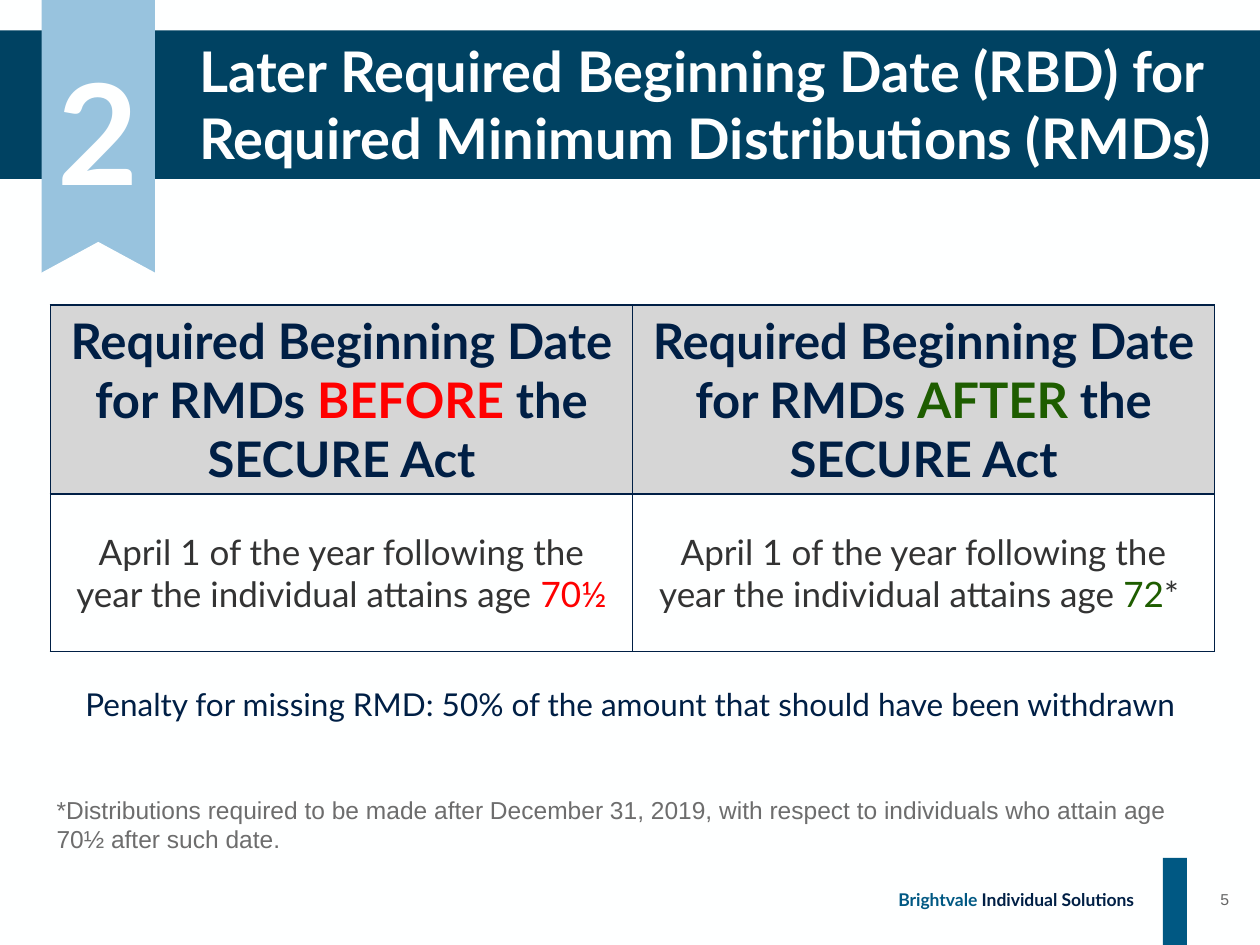
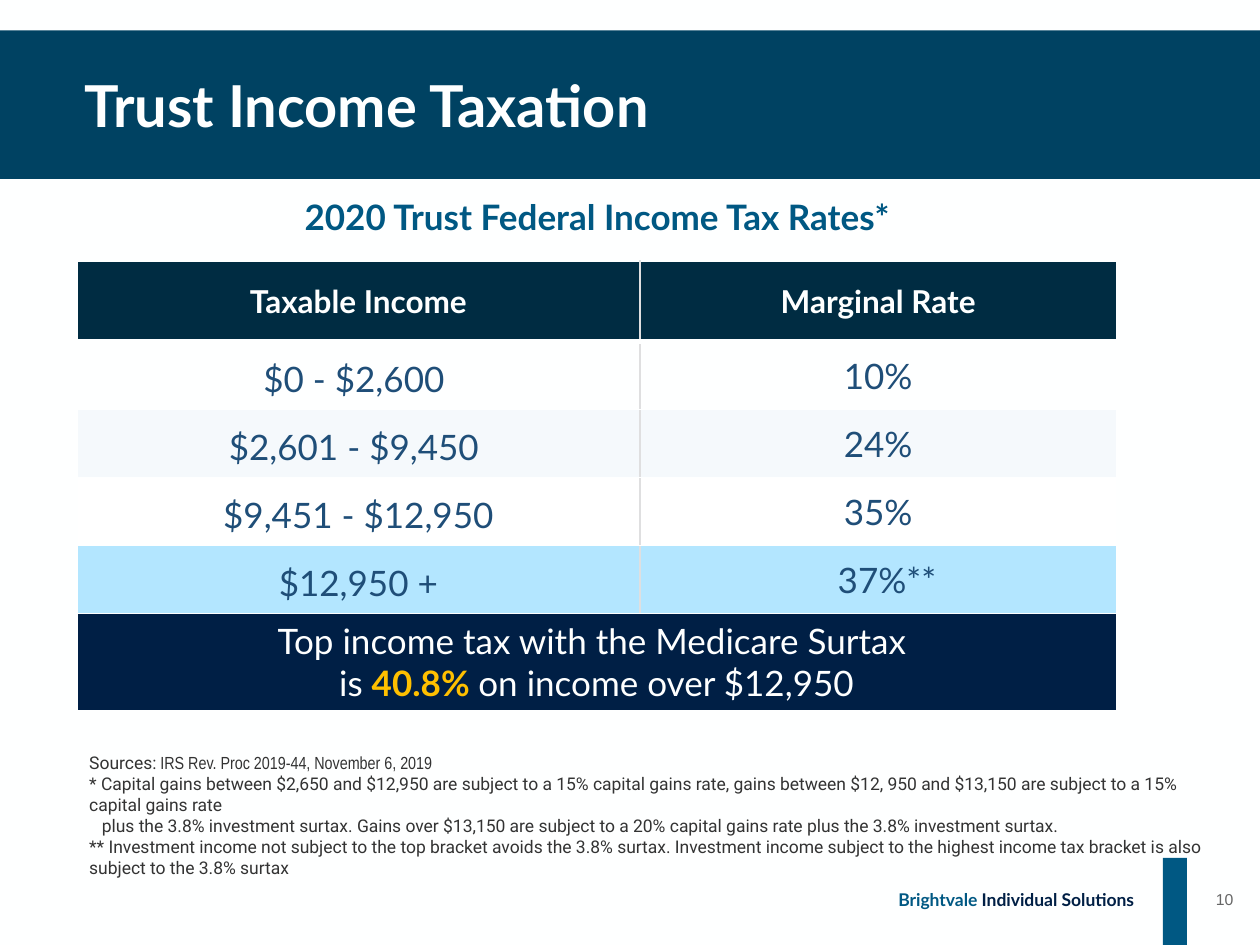
from lxml.etree import SubElement
from pptx import Presentation
from pptx.dml.color import RGBColor
from pptx.enum.shapes import MSO_SHAPE
from pptx.enum.text import MSO_ANCHOR, PP_ALIGN
from pptx.oxml.ns import qn
from pptx.util import Inches, Pt

PAPER, NAVY, BLUE, BAND = "FEFFFF", "001F45", "005883", "004262"
INK, RED, GREEN, GOLD = "333333", "FF0000", "1E5D00", "FFC000"
SKY, GRAY, STEEL, RULE = "98C3DE", "D6D6D6", "1F4E78", "DFDFE0"
LEFT, MID, RIGHT = PP_ALIGN.LEFT, PP_ALIGN.CENTER, PP_ALIGN.RIGHT
TOP, CENTER, BASE = MSO_ANCHOR.TOP, MSO_ANCHOR.MIDDLE, MSO_ANCHOR.BOTTOM


def rgb(code):
    return RGBColor.from_string(code)


class Deck:
    """Holds the shared style and the current slide."""

    def __init__(self):
        self.prs = Presentation()
        self.prs.slide_width, self.prs.slide_height = Inches(10), Inches(7.5)
        self.slide = None

    def page(self, title, num, box, size):
        self.slide = self.prs.slides.add_slide(self.prs.slide_layouts[6])
        fill = self.slide.background.fill
        fill.solid()
        fill.fore_color.rgb = rgb(PAPER)
        self.block((0, 0.24, 10, 1.18), BAND)
        self.block((9.23, 6.81, 0.19, 0.7), BLUE)
        brand = [("Brightvale", {"color": BLUE}), " Individual Solutions"]
        self.text((6.31, 6.76, 2.69, 0.75), [brand], 10, NAVY, bold=True,
                  align=RIGHT, anchor=CENTER, inset=False)
        self.text(box, [title], size, PAPER, bold=True, anchor=CENTER, inset=False)
        self.text((9.44, 6.76, 0.56, 0.75), [num], 9, "666666", face="Arial",
                  align=MID, anchor=CENTER, inset=False)

    def block(self, box, color, kind=MSO_SHAPE.RECTANGLE, turn=0):
        shape = self.slide.shapes.add_shape(kind, *map(Inches, box))
        shape.shadow.inherit = False
        shape.fill.solid()
        shape.fill.fore_color.rgb = rgb(color)
        shape.line.fill.background()
        shape.rotation = turn

    def style(self, font, face=None, size=None, color=None, bold=None):
        if face:
            font.name = face
        if size:
            font.size = Pt(size)
        if color:
            font.color.rgb = rgb(color)
        if bold is not None:
            font.bold = bold

    def put(self, frame, paras, size, color, bold=False, face="Lato",
            align=LEFT, space=None, indents=()):
        for i, parts in enumerate(paras):
            para = frame.paragraphs[0] if i == 0 else frame.add_paragraph()
            para.alignment = align
            if space:
                para.line_spacing = space
            if i < len(indents) and indents[i]:
                para._p.get_or_add_pPr().set("marL", str(Inches(indents[i])))
            self.style(para.font, face, size, color, bold)
            for part in [parts] if isinstance(parts, str) else parts:
                words, look = (part, {}) if isinstance(part, str) else part
                for j, line in enumerate(words.split("\n")):
                    if j:
                        para.add_line_break()
                    run = para.add_run()
                    run.text = line
                    self.style(run.font, **look)

    def text(self, box, paras, size, color, anchor=TOP, inset=True, **look):
        frame = self.slide.shapes.add_textbox(*map(Inches, box)).text_frame
        frame.word_wrap = True
        frame.vertical_anchor = anchor
        if not inset:
            frame.margin_left = frame.margin_right = 0
            frame.margin_top = frame.margin_bottom = 0
        self.put(frame, paras, size, color, **look)

    def table(self, spot, cols, rows):
        shape = self.slide.shapes.add_table(
            len(rows), len(cols), *map(Inches, (*spot, sum(cols), sum(rows))))
        table = shape.table
        table.first_row = table.horz_banding = False
        for col, wide in zip(table.columns, cols):
            col.width = Inches(wide)
        for row, high in zip(table.rows, rows):
            row.height = Inches(high)
        return table

    def cell(self, cell, parts, size, color, fill, edges, anchor=CENTER, **look):
        props = cell._tc.get_or_add_tcPr()
        for side, (tint, width) in zip("LRTB", edges):
            line = SubElement(props, qn(f"a:ln{side}"), w=str(Pt(width)))
            SubElement(SubElement(line, qn("a:solidFill")), qn("a:srgbClr"), val=tint)
        cell.fill.solid()
        cell.fill.fore_color.rgb = rgb(fill)
        cell.vertical_anchor = anchor
        self.put(cell.text_frame, [parts], size, color, align=MID, **look)

    def dates(self):
        self.page("Later Required Beginning Date (RBD) for\n"
                  "Required Minimum Distributions (RMDs)", "5", (1.58, 0.2, 8.33, 1.25), 32)
        self.block((0.33, 0, 0.9, 2.19), SKY)
        self.text((0.33, 0.31, 0.9, 1.45), ["2"], 80, PAPER, bold=True, align=MID)
        self.block((0.46, 1.65, 0.64, 1.18), PAPER, MSO_SHAPE.RIGHT_ARROW, 270)
        self.text((0.35, 6.26, 9.05, 0.57), [
            "*Distributions required to be made after December 31, 2019, with respect to "
            "individuals who attain age 70½ after such date."], 14, "6D6D6D", face="Arial")
        table = self.table((0.4, 2.42), (4.62, 4.62), (1.5, 1.25))
        edges = [(NAVY, 1)] * 4
        cases = [("BEFORE ", "70½", "", RED), ("AFTER ", "72", "* ", GREEN)]
        for c, (when, age, mark, tint) in enumerate(cases):
            look = {"color": tint}
            head = ["Required Beginning Date for RMDs ", (when, look), "the SECURE Act"]
            body = ["April 1 of the year following the year the individual attains age ",
                    (age, look)]
            if mark:
                body.append(mark)
            self.cell(table.cell(0, c), head, 28, NAVY, GRAY, edges, TOP, bold=True)
            self.cell(table.cell(1, c), body, 20, INK, PAPER, edges)
        self.text((0.58, 5.3, 8.85, 0.44), [
            "Penalty for missing RMD: 50% of the amount that should have been withdrawn"],
            18, NAVY, align=MID, anchor=BASE, inset=False)

    def rates(self):
        self.page("Trust Income Taxation", "10", (0.67, 0.24, 9.33, 1.18), 33)
        table = self.table((0.61, 2.07), (4.47, 3.78), [0.64] + [0.54] * 4 + [0.77])
        plain, rule, thick = (PAPER, 1), (RULE, 1), (PAPER, 3)
        sides = [(plain, rule), (rule, plain)]
        for c, name in enumerate(("Taxable Income", "Marginal Rate")):
            self.cell(table.cell(0, c), name, 18, PAPER, "002C42",
                      (*sides[c], plain, thick), bold=True)
        grid = [("$0 - $2,600 ", "10%", PAPER), ("$2,601 - $9,450 ", "24%", "F5F9FC"),
                ("$9,451 - $12,950", "35%", "FFFFFF"), ("$12,950 +", "37%**", "B3E6FF")]
        for r, (income, rate, fill) in enumerate(grid, 1):
            upper = thick if r == 1 else plain
            self.cell(table.cell(r, 0), income, 20, STEEL, fill,
                      (*sides[0], upper, plain), space=1.15)
            self.cell(table.cell(r, 1), rate, 20, STEEL, fill, (*sides[1], upper, plain),
                      indents=[0.14 if "*" in rate else 0])
        last = table.cell(5, 0)
        last.merge(table.cell(5, 1))
        self.cell(last, ["Top income tax with the Medicare Surtax \nis ",
                         ("40.8% ", {"color": GOLD, "bold": True}),
                         "on income over $12,950"], 20, PAPER, NAVY, [plain] * 4)
        self.text((0.61, 5.92, 9.12, 0.77), [
            ["Sources:", (" IRS Rev. Proc 2019-44, November 6, 2019",
                          {"face": "Arial Narrow"})],
            "* Capital gains between $2,650 and $12,950 are subject to a 15% capital gains "
            "rate, gains between $12, 950 and $13,150 are subject to a 15% capital gains rate",
            "plus the 3.8% investment surtax. Gains over $13,150 are subject to a 20% "
            "capital gains rate plus the 3.8% investment surtax.",
            "** Investment income not subject to the top bracket avoids the 3.8% surtax. "
            "Investment income subject to the highest income tax bracket is also subject "
            "to the 3.8% surtax"], 10, INK, face="Roboto", indents=(0, 0, 0.1))
        self.text((1.27, 1.5, 6.94, 0.44), ["2020 Trust Federal Income Tax Rates*"],
                  20, BLUE, bold=True, align=MID)


def main():
    deck = Deck()
    deck.dates()
    deck.rates()
    deck.prs.save("out.pptx")


if __name__ == "__main__":
    main()
